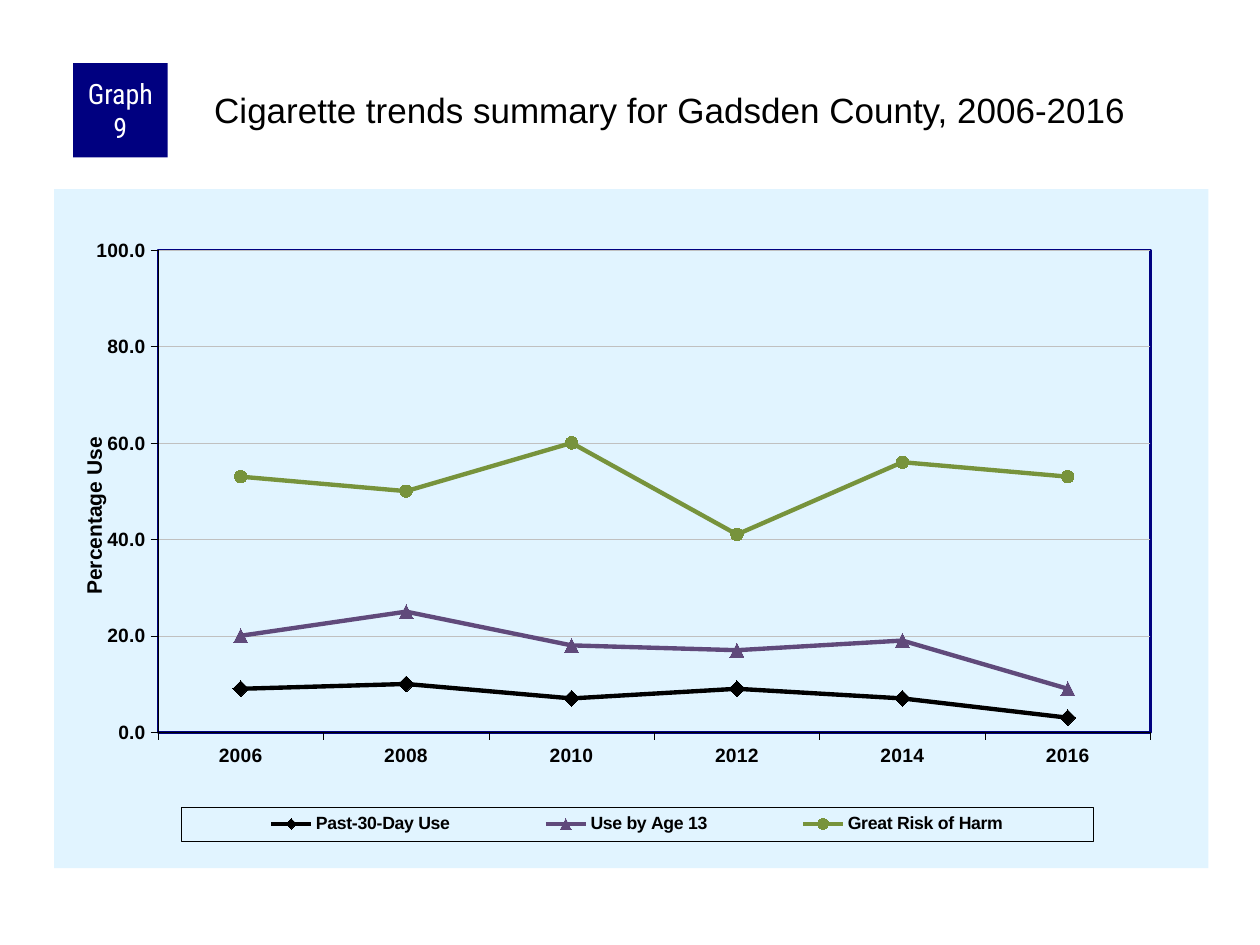
import pptx
import pptx.chart.data
import pptx.dml.color
import pptx.enum.chart
import pptx.enum.shapes
import pptx.enum.text
import pptx.oxml
import pptx.oxml.ns
import pptx.util

Inches = pptx.util.Inches
Pt = pptx.util.Pt
qn = pptx.oxml.ns.qn
Marker = pptx.enum.chart.XL_MARKER_STYLE

YEARS = ["2006", "2008", "2010", "2012", "2014", "2016"]
SERIES = [
    ("Past-30-Day Use", [9, 10, 7, 9, 7, 3], "000000", Marker.DIAMOND, 9),
    ("Use by Age 13", [20, 25, 18, 17, 19, 9], "604A7B", Marker.TRIANGLE, 8),
    ("Great Risk of Harm", [53, 50, 60, 41, 56, 53], "77933C", Marker.CIRCLE, 7),
]


def color(value):
    return pptx.dml.color.RGBColor.from_string(value)


def set_attributes(target, values):
    for name, value in values.items():
        setattr(target, name, value)


def set_line(line, value, width):
    line.color.rgb = color(value)
    line.width = Pt(width)


def chart_xml(tag, content):
    namespaces = pptx.oxml.ns.nsdecls("c", "a")
    return pptx.oxml.parse_xml(f"<c:{tag} {namespaces}>{content}</c:{tag}>")


def fill_xml(value):
    return f'<a:solidFill><a:srgbClr val="{value}"/></a:solidFill>'


def line_xml(value, width):
    return f'<a:ln w="{Pt(width)}">{fill_xml(value)}</a:ln>'


def set_layout(parent, position, target="", **fractions):
    for layout in parent.findall(qn("c:layout")):
        parent.remove(layout)
    content = f'<c:layoutTarget val="{target}"/>' if target else ""
    content += '<c:xMode val="edge"/><c:yMode val="edge"/>'
    content += "".join(f'<c:{name} val="{value}"/>' for name, value in fractions.items())
    manual = f"<c:manualLayout>{content}</c:manualLayout>"
    parent.insert(position, chart_xml("layout", manual))


class SlideBuilder:
    heading_font = "Arial"
    badge_font = "Roboto Condensed"
    navy = "000080"
    panel = "E1F4FF"
    ink = "000000"
    grid = "C0C0C0"

    def __init__(self, presentation):
        self.slide = presentation.slides.add_slide(presentation.slide_layouts[6])

    def style_font(self, font, size, bold=False, name=heading_font, value=ink):
        set_attributes(font, {"name": name, "size": Pt(size), "bold": bold})
        font.color.rgb = color(value)

    def add_text(self, shape, text, margins, anchor, alignment, **style):
        frame = shape.text_frame
        set_attributes(frame, {"word_wrap": True, "vertical_anchor": anchor})
        sides = ("margin_left", "margin_top", "margin_right", "margin_bottom")
        set_attributes(frame, dict(zip(sides, map(Inches, margins))))
        paragraph = frame.paragraphs[0]
        paragraph.alignment = alignment
        run = paragraph.add_run()
        run.text = text
        self.style_font(run.font, **style)

    def badge(self, text, box):
        shape = self.slide.shapes.add_shape(
            pptx.enum.shapes.MSO_SHAPE.RECTANGLE, *map(Inches, box))
        shape.shadow.inherit = False
        shape.fill.solid()
        shape.fill.fore_color.rgb = color(self.navy)
        shape.line.fill.background()
        self.add_text(shape, text, (0.05, 0, 0.05, 0), pptx.enum.text.MSO_ANCHOR.MIDDLE,
                      pptx.enum.text.PP_ALIGN.CENTER,
                      size=16, name=self.badge_font, value="FFFFFF")

    def heading(self, text, box):
        shape = self.slide.shapes.add_textbox(*map(Inches, box))
        self.add_text(shape, text, (0.03, 0.03, 0, 0), pptx.enum.text.MSO_ANCHOR.TOP,
                      pptx.enum.text.PP_ALIGN.LEFT, size=20)

    def line_chart(self, categories, rows, axis_title, box):
        data = pptx.chart.data.CategoryChartData(number_format="0.0")
        data.categories = categories
        for name, values, *_ in rows:
            data.add_series(name, values)
        chart = self.slide.shapes.add_chart(
            pptx.enum.chart.XL_CHART_TYPE.LINE_MARKERS, *map(Inches, box), data).chart
        chart.has_title = False
        self.style_font(chart.font, 8)
        chart.plots[0].vary_by_categories = False
        for series, (_, _, value, marker, size) in zip(chart.plots[0].series, rows):
            series.smooth = False
            set_line(series.format.line, value, 2.5)
            set_attributes(series.marker, {"style": marker, "size": size})
            series.marker.format.fill.solid()
            series.marker.format.fill.fore_color.rgb = color(value)
            set_line(series.marker.format.line, value, 0.75)
        self.axes(chart, axis_title)
        self.legend(chart)
        self.backgrounds(chart)

    def axes(self, chart, title):
        for axis in (chart.category_axis, chart.value_axis):
            axis.major_tick_mark = pptx.enum.chart.XL_TICK_MARK.OUTSIDE
            axis.minor_tick_mark = pptx.enum.chart.XL_TICK_MARK.NONE
            self.style_font(axis.tick_labels.font, 11, bold=True)
            set_line(axis.format.line, self.ink, 0.25)
        axis = chart.value_axis
        set_attributes(axis, {"minimum_scale": 0, "maximum_scale": 100,
                              "major_unit": 20, "has_major_gridlines": True})
        set_attributes(axis.tick_labels,
                       {"number_format": "0.0", "number_format_is_linked": False})
        set_line(axis.major_gridlines.format.line, self.grid, 0.25)
        frame = axis.axis_title.text_frame
        run = frame.paragraphs[0].add_run()
        run.text = title
        self.style_font(run.font, 12, bold=True)
        body = axis.axis_title._element.find(".//" + qn("a:bodyPr"))
        body.set("rot", "-5400000")
        body.set("vert", "horz")
        set_layout(axis.axis_title._element, 1, x=0.02, y=0.36)

    def legend(self, chart):
        chart.has_legend = True
        legend = chart.legend
        set_attributes(legend, {"position": pptx.enum.chart.XL_LEGEND_POSITION.RIGHT,
                                "include_in_layout": False})
        self.style_font(legend.font, 10.1, bold=True)
        element = legend._element
        set_layout(element, 1, x=0.11, y=0.91, w=0.79, h=0.05)
        outline = chart_xml("spPr", "<a:noFill/>" + line_xml(self.ink, 0.25))
        element.find(qn("c:overlay")).addnext(outline)

    def backgrounds(self, chart):
        chart_element = chart._chartSpace.find(qn("c:chart"))
        panel = chart_xml("spPr", fill_xml(self.panel) + "<a:ln><a:noFill/></a:ln>")
        chart_element.addnext(panel)
        plot_area = chart_element.find(qn("c:plotArea"))
        set_layout(plot_area, 0, target="inner", x=0.09, y=0.09, w=0.86, h=0.71)
        plot_area.append(chart_xml("spPr", "<a:noFill/>" + line_xml(self.navy, 1.5)))


def main():
    presentation = pptx.Presentation()
    set_attributes(presentation, {"slide_width": Inches(10), "slide_height": Inches(7.5)})
    builder = SlideBuilder(presentation)
    builder.line_chart(YEARS, SERIES, "Percentage Use", (0.43, 1.5, 9.16, 5.39))
    builder.badge("Graph 9", (0.58, 0.5, 0.75, 0.75))
    builder.heading("Cigarette trends summary for Gadsden County, 2006-2016",
                    (1.67, 0.67, 7.92, 0.83))
    presentation.save("out.pptx")


if __name__ == "__main__":
    main()
